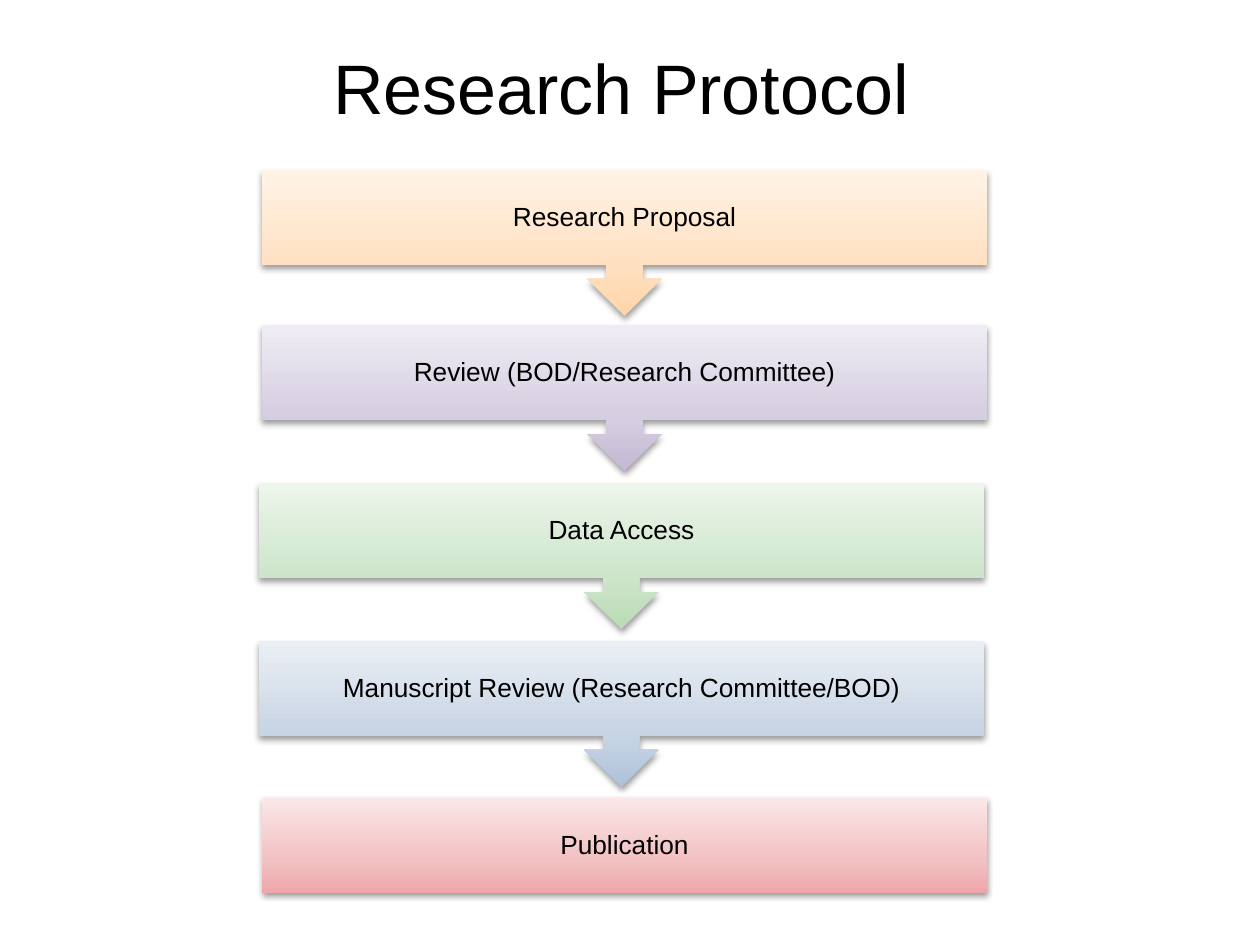
import pptx
import pptx.util
import pptx.dml.color
import pptx.enum.text
import pptx.oxml.ns
import lxml.etree
from dataclasses import dataclass

PX = 914400 / 126


@dataclass(frozen=True)
class Theme:
    font: str = "Arial"
    text: str = "000000"
    title_size: int = 40
    step_size: int = 15
    orange: tuple = ("FFD5A8", "FFE0C1", "FFF3E7")
    purple: tuple = ("C4B8D4", "D5CDE0", "EFECF4")
    green: tuple = ("B8DCB3", "CDE5CA", "ECF6EA")
    blue: tuple = ("AFC2DA", "C7D4E4", "EAEFF5")
    red: tuple = ("EEA6A9", "F2C1C3", "FBE7E7")


THEME = Theme()
STEP_W, BODY_H, NECK_H, ARROW_H = 725, 95, 14, 51
STEM_HALF, HEAD_HALF = 18, 37
INSET = 15
STEPS = [
    ("Research Proposal", 262, 170, THEME.orange),
    ("Review (BOD/Research Committee)", 262, 325, THEME.purple),
    ("Data Access", 259, 483, THEME.green),
    ("Manuscript Review (Research Committee/BOD)", 259, 641, THEME.blue),
    ("Publication", 262, 798, THEME.red),
]


def px(n):
    return pptx.util.Emu(round(n * PX))


def sub(parent, tag, **attrs):
    return lxml.etree.SubElement(parent, pptx.oxml.ns.qn(tag), **attrs)


def set_text(s, text, size, insets):
    tf = s.text_frame
    tf.text = text
    tf.word_wrap = True
    tf.vertical_anchor = pptx.enum.text.MSO_ANCHOR.MIDDLE
    tf.margin_left, tf.margin_top, tf.margin_right, tf.margin_bottom = map(px, insets)
    p = tf.paragraphs[0]
    p.alignment = pptx.enum.text.PP_ALIGN.CENTER
    r = p.runs[0]
    r.font.name = THEME.font
    r.font.size = pptx.util.Pt(size)
    r.font.color.rgb = pptx.dml.color.RGBColor.from_string(THEME.text)
    return p


def set_gradient(s, colors):
    s.fill.gradient()
    s.fill.gradient_angle = 90
    stops = s._element.spPr.find(".//" + pptx.oxml.ns.qn("a:gsLst"))
    for gs in list(stops):
        stops.remove(gs)
    for pos, color in zip((0, 35, 100), colors):
        gs = sub(stops, "a:gs", pos=str(pos * 1000))
        sub(gs, "a:srgbClr", val=color)


def set_shadow(s):
    s.shadow.inherit = False
    effects = s._element.spPr.find(pptx.oxml.ns.qn("a:effectLst"))
    shadow = sub(effects, "a:outerShdw", blurRad="40000", dist="20000",
                 dir="5400000", rotWithShape="0")
    color = sub(shadow, "a:srgbClr", val="000000")
    sub(color, "a:alpha", val="38000")


def add_title(slide, x, y, w, h):
    s = slide.shapes.add_textbox(px(x), px(y), px(w), px(h))
    set_text(s, "Research Protocol", THEME.title_size, (13, 6, 13, 6))


def add_step(slide, x, y, w, h, text, colors, has_arrow):
    mid, neck, tip = x + w / 2, y + h + NECK_H, y + h + ARROW_H
    points = [(x + w, y), (x + w, y + h)]
    if has_arrow:
        points += [
            (mid + STEM_HALF, y + h), (mid + STEM_HALF, neck),
            (mid + HEAD_HALF, neck), (mid, tip), (mid - HEAD_HALF, neck),
            (mid - STEM_HALF, neck), (mid - STEM_HALF, y + h),
        ]
    points.append((x, y + h))
    outline = slide.shapes.build_freeform(round(x * PX), round(y * PX), scale=1.0)
    outline.add_line_segments([(px(a), px(b)) for a, b in points], close=True)
    s = outline.convert_to_shape()
    set_gradient(s, colors)
    s.line.fill.background()
    set_shadow(s)
    bottom = INSET + (ARROW_H if has_arrow else 0)
    p = set_text(s, text, THEME.step_size, (INSET, INSET, INSET, bottom))
    p.line_spacing = 0.9


def add_flow(slide, steps):
    for i, (text, x, y, colors) in enumerate(steps):
        add_step(slide, x, y, STEP_W, BODY_H, text, colors, i < len(steps) - 1)


def main():
    prs = pptx.Presentation()
    prs.slide_width, prs.slide_height = px(1260), px(945)
    slide = prs.slides.add_slide(prs.slide_layouts[6])
    add_title(slide, 99, 22, 1044, 130)
    add_flow(slide, STEPS)
    prs.save("out.pptx")


if __name__ == "__main__":
    main()
